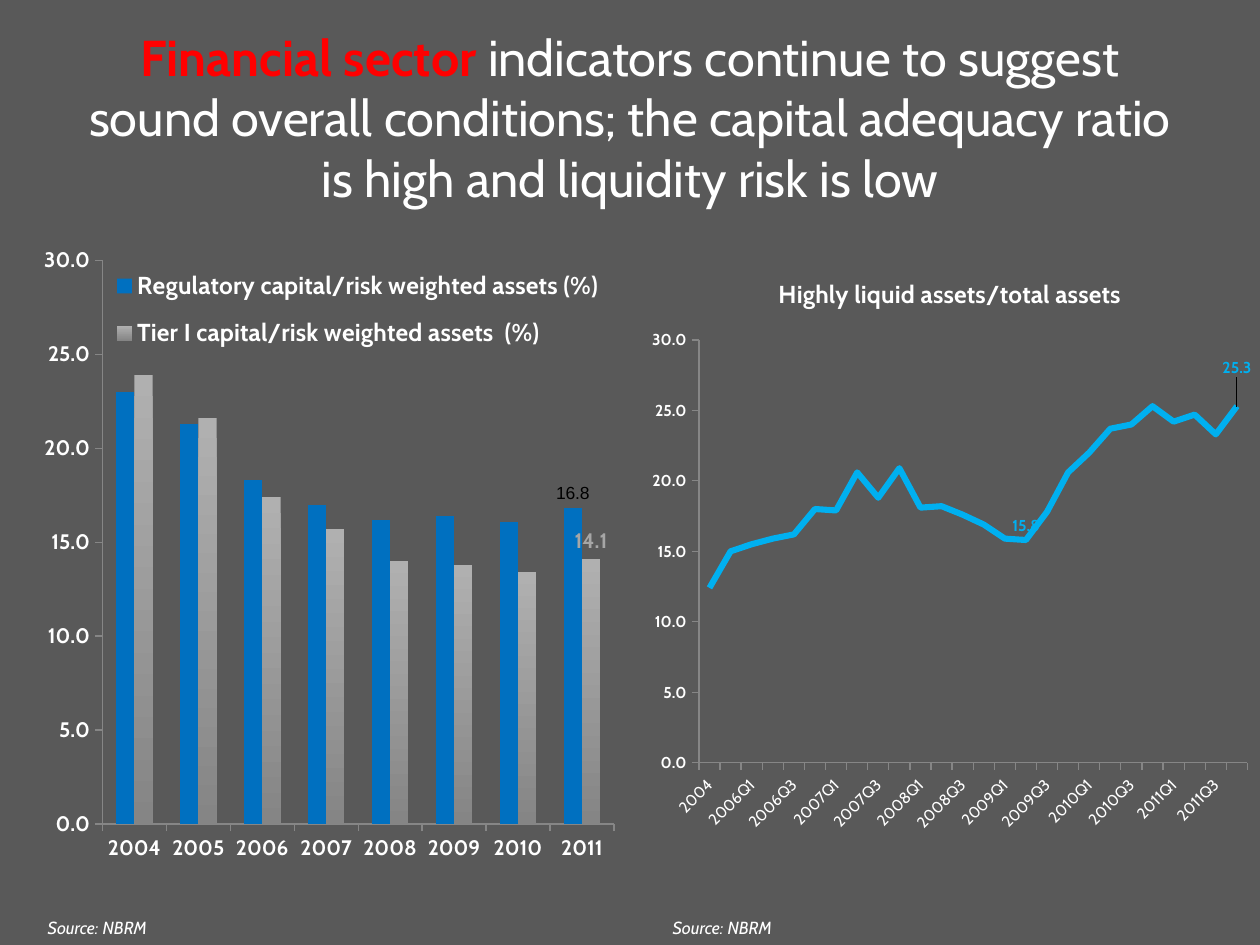
from dataclasses import dataclass, field
from typing import Any

from lxml import etree
from pptx import Presentation
from pptx import util as u
from pptx.chart import data as chart_data
from pptx.dml import color as dml
from pptx.enum import chart as chart_enum
from pptx.enum import text as text_enum
from pptx.oxml import ns

SCALE = 9144
COLORS = {
    "background": "595959",
    "text": "FFFFFF",
    "accent": "FF0000",
    "regulatory": "0070C0",
    "tier_top": "B0B0B0",
    "tier_bottom": "858585",
    "tier_label": "A6A6A6",
    "liquid": "00B0F0",
    "axis": "868686",
    "black": "000000",
}
FONT = "Cabin"


@dataclass
class Box:
    left: int
    top: int
    width: int
    height: int

    def emu(self) -> list[u.Emu]:
        return [u.Emu(n * SCALE) for n in (self.left, self.top, self.width, self.height)]


@dataclass
class Label:
    point: int
    color: str
    size: float
    bold: bool = True
    name: str = FONT
    rise: float = 0


@dataclass
class Series:
    name: str
    values: list[float]
    labels: list[Label] = field(default_factory=list)


@dataclass
class ChartSpec:
    kind: Any
    box: Box
    size: int
    categories: list[str]
    series: list[Series]
    plot_layout: dict[str, float]


def rgb(name: str) -> dml.RGBColor:
    return dml.RGBColor.from_string(COLORS[name])


def format_font(font: Any, color: str = "text", **values: Any) -> None:
    for key, value in {"name": FONT, **values}.items():
        setattr(font, key, value)
    font.color.rgb = rgb(color)


def set_layout(element: Any, index: int, values: dict[str, float], inner: bool = False) -> None:
    for old in element.findall(ns.qn("c:layout")):
        element.remove(old)
    layout = etree.Element(ns.qn("c:layout"))
    manual = etree.SubElement(layout, ns.qn("c:manualLayout"))
    if inner:
        etree.SubElement(manual, ns.qn("c:layoutTarget")).set("val", "inner")
    if "w" in values:
        for mode in ("xMode", "yMode"):
            etree.SubElement(manual, ns.qn(f"c:{mode}")).set("val", "edge")
    for key, value in values.items():
        etree.SubElement(manual, ns.qn(f"c:{key}")).set("val", str(value))
    element.insert(index, layout)


def add_label(series: Any, label: Label, position: Any) -> None:
    data_label = series.points[label.point].data_label
    format_font(data_label.font, label.color, size=u.Pt(label.size), bold=label.bold, name=label.name)
    data_label.position = position
    if label.rise:
        element = series._element.xpath(f'c:dLbls/c:dLbl[c:idx/@val="{label.point}"]')[0]
        set_layout(element, 1, {"x": 0, "y": -label.rise})


def add_chart(slide: Any, spec: ChartSpec) -> Any:
    data = chart_data.CategoryChartData(number_format="0.0")
    data.categories = spec.categories
    for item in spec.series:
        data.add_series(item.name, item.values)
    chart = slide.shapes.add_chart(spec.kind, *spec.box.emu(), data).chart
    chart.has_title = False
    chart.has_legend = False
    format_font(chart.font, size=u.Pt(spec.size), bold=True)
    for axis in (chart.category_axis, chart.value_axis):
        axis.has_major_gridlines = False
        axis.major_tick_mark = chart_enum.XL_TICK_MARK.OUTSIDE
        axis.format.line.color.rgb = rgb("axis")
        format_font(axis.tick_labels.font, size=u.Pt(spec.size), bold=True)
    value_axis = chart.value_axis
    for key, value in {"minimum_scale": 0, "maximum_scale": 30, "major_unit": 5}.items():
        setattr(value_axis, key, value)
    value_axis.tick_labels.number_format = "0.0"
    value_axis.tick_labels.number_format_is_linked = False
    chart.plots[0].vary_by_categories = False
    set_layout(chart._chartSpace.chart.plotArea, 0, spec.plot_layout, inner=True)
    is_line = spec.kind == chart_enum.XL_CHART_TYPE.LINE
    positions = chart_enum.XL_LABEL_POSITION
    for series, item in zip(chart.plots[0].series, spec.series):
        for label in item.labels:
            add_label(series, label, positions.ABOVE if is_line else positions.OUTSIDE_END)
    return chart


def add_capital_chart(slide: Any) -> None:
    spec = ChartSpec(
        chart_enum.XL_CHART_TYPE.COLUMN_CLUSTERED, Box(20, 186, 472, 520), 12,
        [str(year) for year in range(2004, 2012)],
        [
            Series("Regulatory capital/risk weighted assets (%)",
                   [23.0, 21.3, 18.3, 17.0, 16.2, 16.4, 16.1, 16.8],
                   [Label(7, "black", 10, False, "Arial")]),
            Series("Tier I capital/risk weighted assets  (%)",
                   [23.9, 21.6, 17.4, 15.7, 14.0, 13.8, 13.4, 14.1],
                   [Label(7, "tier_label", 12)]),
        ],
        {"x": 0.13, "y": 0.04, "w": 0.86, "h": 0.86},
    )
    chart = add_chart(slide, spec)
    plot = chart.plots[0]
    plot.gap_width, plot.overlap = 150, 0
    regulatory, tier = plot.series
    regulatory.format.fill.solid()
    regulatory.format.fill.fore_color.rgb = rgb("regulatory")
    fill = tier.format.fill
    fill.gradient()
    fill.gradient_angle = 270
    for stop, name in zip(fill.gradient_stops, ("tier_top", "tier_bottom")):
        stop.color.rgb = rgb(name)
    chart.has_legend = True
    legend = chart.legend
    legend.position = chart_enum.XL_LEGEND_POSITION.RIGHT
    legend.include_in_layout = False
    format_font(legend.font, size=u.Pt(14), bold=True)
    set_layout(legend._element, 1, {"x": 0.14, "y": 0.03, "w": 0.84, "h": 0.17})


def add_liquidity_chart(slide: Any) -> None:
    title = "Highly liquid assets/total assets"
    quarters = [f"{year}Q{quarter}" for year in range(2006, 2012) for quarter in range(1, 5)]
    values = [12.4, 15, 15.5, 15.9, 16.2, 18, 17.9, 20.6, 18.8, 20.9, 18.1, 18.2, 17.6,
              16.9, 15.9, 15.8, 17.8, 20.6, 22, 23.7, 24, 25.3, 24.2, 24.7, 23.3, 25.3]
    labels = [Label(15, "liquid", 9), Label(25, "liquid", 9, rise=0.04)]
    spec = ChartSpec(
        chart_enum.XL_CHART_TYPE.LINE, Box(508, 202, 492, 468), 9,
        ["2004", "2005", *quarters], [Series(title, values, labels)],
        {"x": 0.095, "y": 0.145, "w": 0.885, "h": 0.717},
    )
    chart = add_chart(slide, spec)
    chart.has_title = True
    chart.chart_title.include_in_layout = False
    paragraph = chart.chart_title.text_frame.paragraphs[0]
    run = paragraph.add_run()
    run.text = title
    format_font(run.font, size=u.Pt(14), bold=True)
    series = chart.plots[0].series[0]
    series.smooth = False
    series.marker.style = chart_enum.XL_MARKER_STYLE.NONE
    series.format.line.color.rgb = rgb("liquid")
    series.format.line.width = u.Pt(3.5)
    axis = chart.category_axis
    axis.tick_labels.font.bold = False
    axis._element.find(".//" + ns.qn("a:bodyPr")).set("rot", "-2700000")
    skip = etree.Element(ns.qn("c:tickLblSkip"))
    skip.set("val", "2")
    axis._element.find(ns.qn("c:noMultiLvlLbl")).addprevious(skip)


def add_title(slide: Any) -> None:
    title = slide.shapes.title
    title.left, title.top, title.width, title.height = Box(50, 30, 900, 125).emu()
    frame = title.text_frame
    for key, value in {"word_wrap": True, "auto_size": text_enum.MSO_AUTO_SIZE.NONE,
                       "vertical_anchor": text_enum.MSO_ANCHOR.MIDDLE}.items():
        setattr(frame, key, value)
    paragraph = frame.paragraphs[0]
    paragraph.alignment = text_enum.PP_ALIGN.CENTER
    for words, color, bold in (
        ("Financial sector ", "accent", True),
        ("indicators continue to suggest sound overall conditions; the capital adequacy "
         "ratio is high and liquidity risk is low", "text", False),
    ):
        run = paragraph.add_run()
        run.text = words
        format_font(run.font, color, size=u.Pt(28.8), bold=bold)


def add_source(slide: Any, left: int) -> None:
    frame = slide.shapes.add_textbox(*Box(left, 723, 157, 27).emu()).text_frame
    frame.word_wrap = True
    run = frame.paragraphs[0].add_run()
    run.text = "Source: NBRM"
    format_font(run.font, size=u.Pt(10), italic=True)


def main() -> None:
    presentation = Presentation()
    presentation.slide_width, presentation.slide_height = Box(0, 0, 1000, 750).emu()[2:]
    slide = presentation.slides.add_slide(presentation.slide_layouts[5])
    slide.background.fill.solid()
    slide.background.fill.fore_color.rgb = rgb("background")
    add_title(slide)
    add_capital_chart(slide)
    for left in (28, 524):
        add_source(slide, left)
    add_liquidity_chart(slide)
    presentation.save("out.pptx")


if __name__ == "__main__":
    main()
